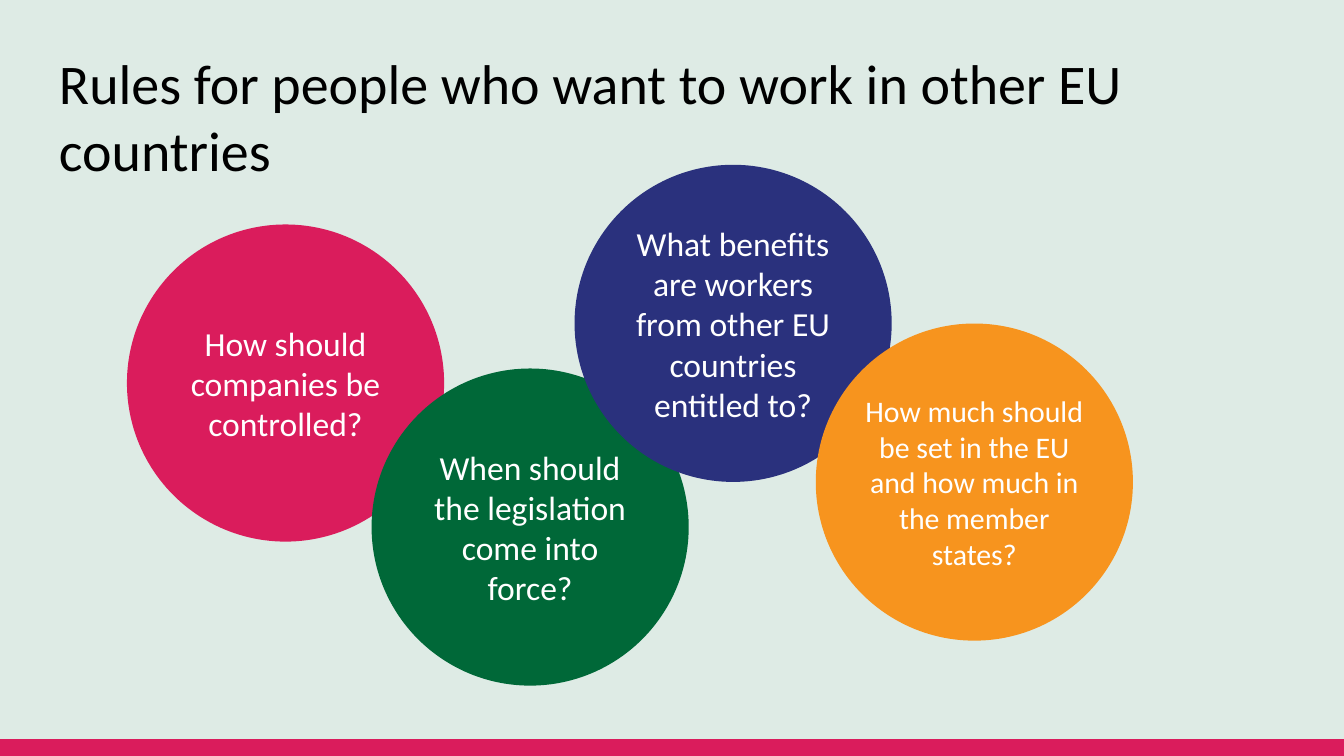
from typing import NamedTuple

from pptx import Presentation, util as u
from pptx.dml.color import RGBColor
from pptx.enum import shapes, text

WIDTH = 10
HEIGHT = WIDTH * 9 / 16
DIAMETER = 2.36
BAR_HEIGHT = 0.12
PINK, GREEN, BLUE, ORANGE = "DA1C5C", "006838", "2A317D", "F7941E"
WHITE, BLACK, PALE_GREEN = "FFFFFF", "000000", "DEEBE5"


class Question(NamedTuple):
    x: float  # left edge, percent of slide width
    y: float  # top edge, percent of slide height
    color: str
    wording: str
    size: int = 18


QUESTIONS = [
    Question(9.45, 29.7, PINK, "How should companies be controlled?"),
    Question(27.65, 48.75, GREEN, "When should the legislation come into force?"),
    Question(42.75, 21.8, BLUE,
             "What benefits are workers from other EU countries entitled to?"),
    Question(60.7, 42.8, ORANGE,
             "How much should be set in the EU and how much in the member states?", 16),
]


def paint(fill, color: str) -> None:
    fill.solid()
    fill.fore_color.rgb = RGBColor.from_string(color)


def write(sp, wording: str, size: int, color: str, side: float, anchor, align) -> None:
    tf = sp.text_frame
    frame_format = {
        "word_wrap": True, "vertical_anchor": anchor,
        "margin_left": u.Inches(side), "margin_right": u.Inches(side),
        "margin_top": u.Inches(0.1), "margin_bottom": u.Inches(0.1),
    }
    for name, value in frame_format.items():
        setattr(tf, name, value)
    p = tf.paragraphs[0]
    p.alignment = align
    r = p.add_run()
    r.text = wording
    for name, value in {"name": "Calibri", "size": u.Pt(size)}.items():
        setattr(r.font, name, value)
    paint(r.font.fill, color)


def add_shape(s, kind, x: float, y: float, w: float, h: float, color: str):
    sp = s.shapes.add_shape(kind, *map(u.Inches, (x, y, w, h)))
    sp.shadow.inherit = False
    paint(sp.fill, color)
    sp.line.fill.background()
    return sp


def add_question(s, q: Question) -> None:
    sp = add_shape(s, shapes.MSO_SHAPE.OVAL, q.x * WIDTH / 100, q.y * HEIGHT / 100,
                   DIAMETER, DIAMETER, q.color)
    write(sp, q.wording, q.size, WHITE, 0, text.MSO_ANCHOR.MIDDLE, text.PP_ALIGN.CENTER)


def main() -> None:
    prs = Presentation()
    prs.slide_width, prs.slide_height = u.Inches(WIDTH), u.Inches(HEIGHT)
    s = prs.slides.add_slide(prs.slide_layouts[6])
    paint(s.background.fill, PALE_GREEN)

    # Title
    title = s.shapes.add_textbox(*map(u.Inches, (0.34, 0.26, 9.32, 1.16)))
    write(title, "Rules for people who want to work in other EU countries",
          30, BLACK, 0.1, text.MSO_ANCHOR.TOP, text.PP_ALIGN.LEFT)

    # Bottom bar
    bar = add_shape(s, shapes.MSO_SHAPE.RECTANGLE, 0, HEIGHT - BAR_HEIGHT,
                    WIDTH, BAR_HEIGHT, PINK)
    paint(bar.line.fill, PINK)
    bar.line.width = u.Pt(0.75)

    # Overlapping question circles, back to front
    for q in QUESTIONS:
        add_question(s, q)

    prs.save("out.pptx")


if __name__ == "__main__":
    main()
